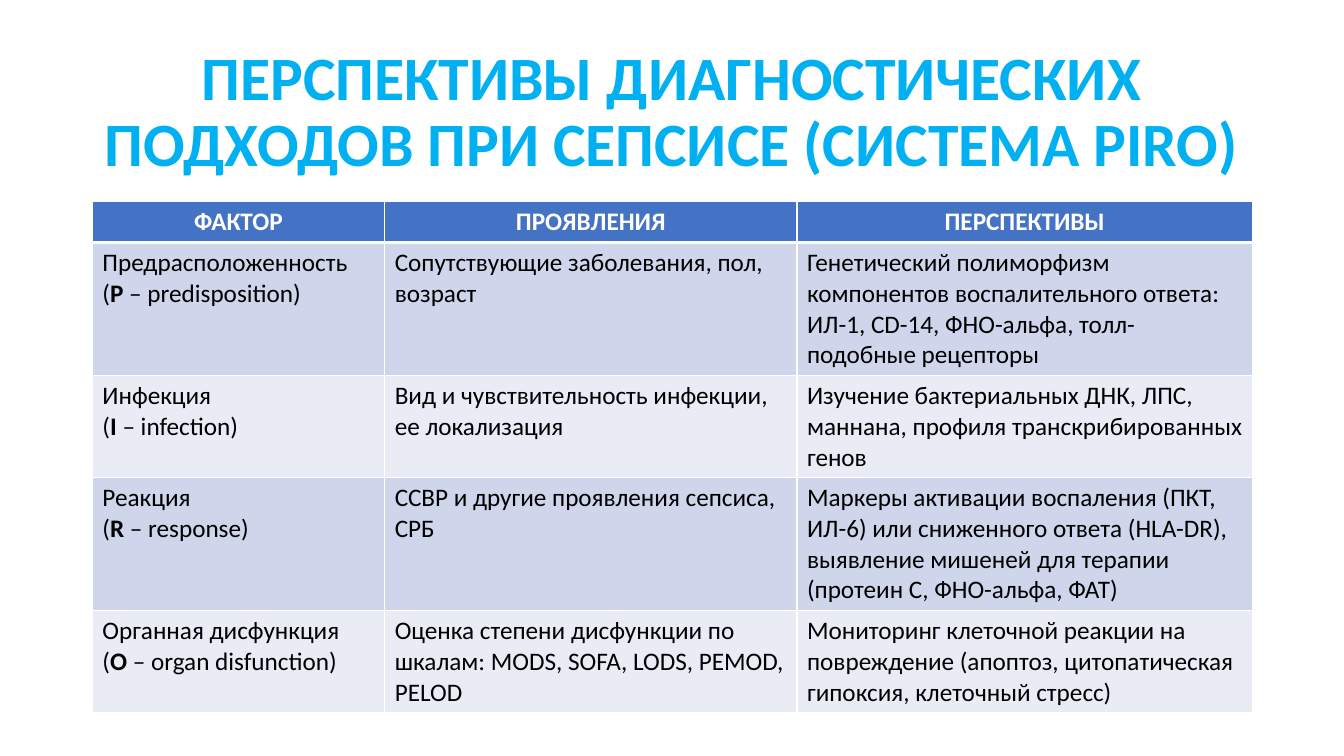
from dataclasses import dataclass

from lxml.etree import SubElement
from pptx import Presentation
from pptx.dml.color import RGBColor as RGB
from pptx.enum.text import MSO_ANCHOR as Anchor, PP_ALIGN as Align
from pptx.oxml.ns import qn
from pptx.util import Pt


@dataclass(frozen=True)
class Theme:
    font: str = "Calibri"
    title_size: int = 44
    body_size: int = 18
    title: str = "00B0F0"
    header: str = "4472C4"
    bands: tuple = ("CFD5EA", "E9EBF5")
    text: str = "000000"
    white: str = "FFFFFF"


TITLE = "ПЕРСПЕКТИВЫ ДИАГНОСТИЧЕСКИХ ПОДХОДОВ ПРИ СЕПСИСЕ (СИСТЕМА PIRO)"
HEADINGS = ("ФАКТОР", "ПРОЯВЛЕНИЯ", "ПЕРСПЕКТИВЫ")
FACTORS = [
    ("Предрасположенность\n(*P* – predisposition)",
     "Сопутствующие заболевания, пол, возраст",
     "Генетический полиморфизм компонентов воспалительного ответа: "
     "ИЛ-1, CD-14, ФНО-альфа, толл-подобные рецепторы"),
    ("Инфекция\n(*I* – infection)",
     "Вид и чувствительность инфекции, ее локализация",
     "Изучение бактериальных ДНК, ЛПС, маннана, профиля "
     "транскрибированных генов"),
    ("Реакция\n(*R* – response)",
     "ССВР и другие проявления сепсиса, СРБ",
     "Маркеры активации воспаления (ПКТ, ИЛ-6) или сниженного ответа "
     "(HLA-DR), выявление мишеней для терапии "
     "(протеин С, ФНО-альфа, ФАТ)"),
    ("Органная дисфункция\n(*O* – organ disfunction)",
     "Оценка степени дисфункции по шкалам: MODS, SOFA, LODS, PEMOD, PELOD",
     "Мониторинг клеточной реакции на повреждение (апоптоз, "
     "цитопатическая гипоксия, клеточный стресс)"),
]
COLUMN_WIDTHS = (208.8, 294.5, 325.4)
ROW_HEIGHTS = (29.2, 95, 73, 95, 73)


class Deck:
    """Draws styled elements on the current slide; *stars* mark bold text."""

    def __init__(self, prs, theme):
        self.theme = theme
        self.s = prs.slides.add_slide(prs.slide_layouts[6])

    def text(self, tf, text, size, color, bold=False, align=Align.LEFT):
        tf.word_wrap = True
        for i, line in enumerate(text.split("\n")):
            p = tf.add_paragraph() if i else tf.paragraphs[0]
            p.alignment = align
            p.font.name, p.font.size = self.theme.font, Pt(size)
            p.font.color.rgb = RGB.from_string(color)
            p.font.bold = bold
            for j, part in enumerate(line.split("*")):
                r = p.add_run()
                r.text = part
                if j % 2:
                    r.font.bold = True

    def title(self, text, left, top, width, height):
        tf = self.s.shapes.add_textbox(
            Pt(left), Pt(top), Pt(width), Pt(height)).text_frame
        tf.vertical_anchor = Anchor.MIDDLE
        self.text(tf, text, self.theme.title_size, self.theme.title,
                  True, Align.CENTER)
        tf.paragraphs[0].line_spacing = 0.9

    def borders(self, cell, top, bottom):
        tc_pr = cell._tc.get_or_add_tcPr()
        for side, width in zip("LRTB", (1, 1, top, bottom)):
            ln = SubElement(tc_pr, qn(f"a:ln{side}"), w=str(Pt(width)))
            fill = SubElement(ln, qn("a:solidFill"))
            SubElement(fill, qn("a:srgbClr"), val=self.theme.white)

    def cell(self, cell, text, row):
        t = self.theme
        header = row == 0
        self.borders(cell, 3 if row == 1 else 1, 3 if header else 1)
        cell.fill.solid()
        cell.fill.fore_color.rgb = RGB.from_string(
            t.header if header else t.bands[(row - 1) % 2])
        self.text(cell.text_frame, text, t.body_size,
                  t.white if header else t.text, header,
                  Align.CENTER if header else Align.LEFT)

    def table(self, rows, widths, heights, left, top):
        table = self.s.shapes.add_table(
            len(rows), len(widths), Pt(left), Pt(top),
            Pt(sum(widths)), Pt(sum(heights))).table
        for column, width in zip(table.columns, widths):
            column.width = Pt(width)
        for i, (row, height) in enumerate(zip(rows, heights)):
            table.rows[i].height = Pt(height)
            for j, text in enumerate(row):
                self.cell(table.cell(i, j), text, i)


def main():
    prs = Presentation()
    prs.slide_width, prs.slide_height = Pt(960), Pt(540)
    deck = Deck(prs, Theme())
    deck.title(TITLE, 66, 28.8, 828, 104.4)
    deck.table([HEADINGS, *FACTORS], COLUMN_WIDTHS, ROW_HEIGHTS, 66, 144)
    prs.save("out.pptx")


if __name__ == "__main__":
    main()
